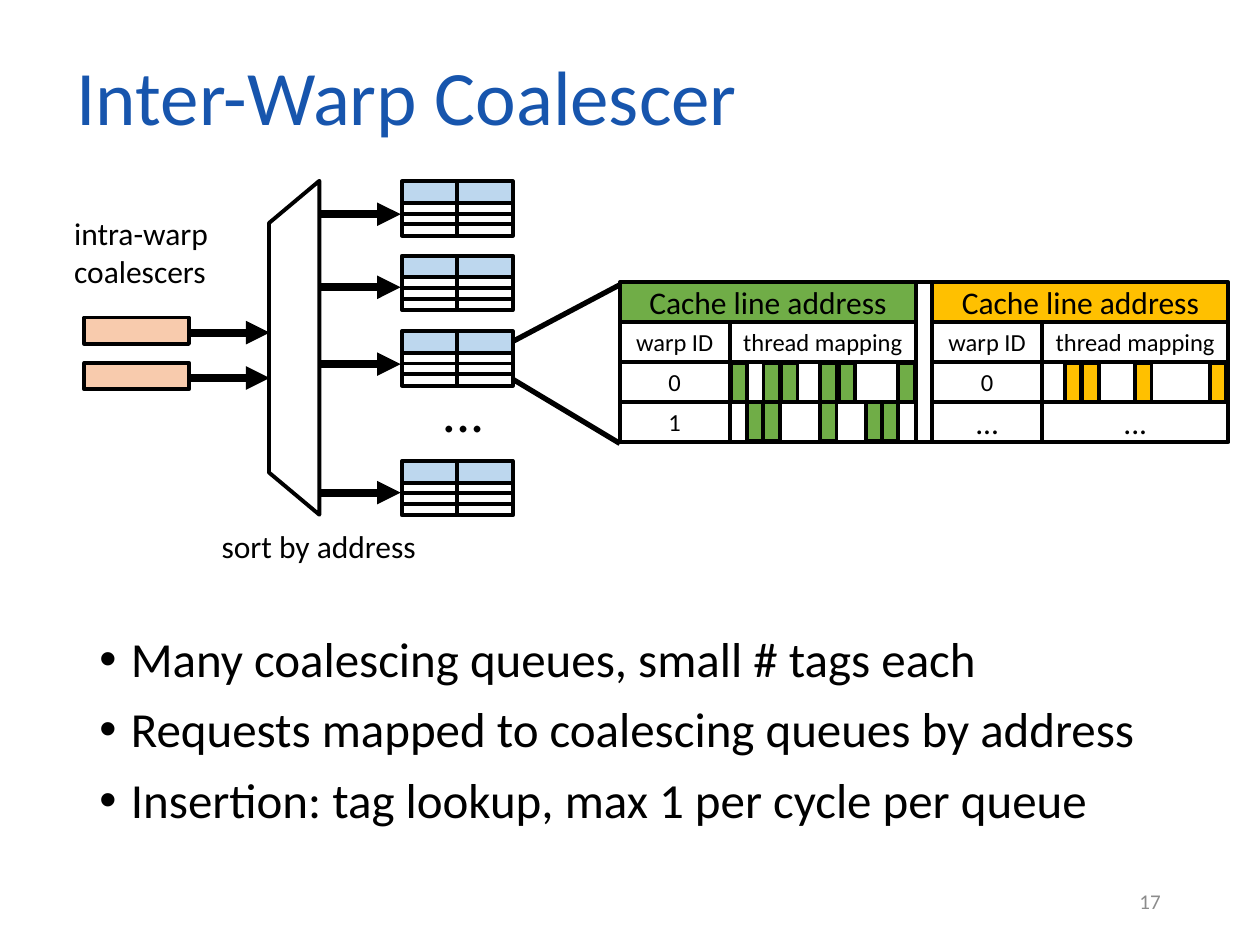
from lxml.etree import SubElement
from pptx import Presentation
from pptx.dml.color import RGBColor
from pptx.enum.shapes import MSO_CONNECTOR, MSO_SHAPE
from pptx.enum.text import MSO_ANCHOR, PP_ALIGN
from pptx.oxml.ns import qn
from pptx.util import Inches, Pt

BLACK, WHITE = "000000", "FFFFFF"
GREEN, AMBER, BLUE, PEACH = "70AD47", "FFC000", "BDD7EE", "F8CBAD"

presentation = Presentation()
presentation.slide_width, presentation.slide_height = Inches(10), Inches(7.5)
slide = presentation.slides.add_slide(presentation.slide_layouts[6])
shapes = slide.shapes


def color(hex_string):
    return RGBColor.from_string(hex_string)


def block(x, y, width, height, fill, text="", size=14, preset=MSO_SHAPE.RECTANGLE):
    """Add an outlined shape with centred text."""
    shape = shapes.add_shape(preset, Inches(x), Inches(y), Inches(width), Inches(height))
    shape.shadow.inherit = False
    shape.fill.solid()
    shape.fill.fore_color.rgb = color(fill)
    shape.line.color.rgb = color(BLACK)
    shape.line.width = Pt(2.25)
    if text:
        shape.text_frame.text = text
        shape.text_frame.vertical_anchor = MSO_ANCHOR.MIDDLE
        paragraph = shape.text_frame.paragraphs[0]
        paragraph.alignment = PP_ALIGN.CENTER
        font = paragraph.runs[0].font
        font.name, font.size, font.color.rgb = "Calibri", Pt(size), color(BLACK)
    return shape


# Title, bullets, slide number and diagram labels
bullets = """Many coalescing queues, small # tags each
Requests mapped to coalescing queues by address
Insertion: tag lookup, max 1 per cycle per queue"""
TOP, MIDDLE = MSO_ANCHOR.TOP, MSO_ANCHOR.MIDDLE
LEFT, RIGHT = PP_ALIGN.LEFT, PP_ALIGN.RIGHT
for text, x, y, width, height, size, hue, anchor, alignment in [
    ("Inter-Warp Coalescer", 0.51, 0.29, 9, 0.92, 44, "1755AD", MIDDLE, LEFT),
    (bullets, 0.69, 4.99, 8.62, 1.78, 28, BLACK, TOP, LEFT),
    ("17", 7.06, 6.95, 2.25, 0.4, 12, "8C8C8C", MIDDLE, RIGHT),
    ("...", 3.41, 2.94, 0.9, 0.64, 32, BLACK, TOP, LEFT),
    ("intra-warp\ncoalescers", 0.49, 1.65, 1.75, 0.71, 18, BLACK, TOP, LEFT),
    ("sort by address", 1.66, 4.13, 1.75, 0.4, 18, BLACK, TOP, LEFT),
]:
    frame = shapes.add_textbox(Inches(x), Inches(y), Inches(width), Inches(height)).text_frame
    frame.word_wrap = True
    frame.vertical_anchor = anchor
    frame.text = text
    for paragraph in frame.paragraphs:
        paragraph.alignment = alignment
        font = paragraph.runs[0].font
        font.name, font.size, font.color.rgb = "Calibri", Pt(size), color(hue)
        if text == bullets:
            paragraph.line_spacing = 0.9
            paragraph.space_before = Pt(10)
            properties = paragraph._p.get_or_add_pPr()
            properties.set("marL", str(Inches(0.25)))
            properties.set("indent", str(-Inches(0.25)))
            SubElement(properties, qn("a:buFont")).set("typeface", "Arial")
            SubElement(properties, qn("a:buChar")).set("char", "•")

# Sorting stage, turned so that its narrow side faces the inputs
sorter = block(1.01, 2.56, 2.65, 0.4, WHITE, preset=MSO_SHAPE.TRAPEZOID)
sorter.adjustments[0] = 0.838
sorter.rotation = 270

# Coalescing queues: a tag row above three entry rows, in two columns
for queue_y in (1.44, 2.03, 2.63, 3.66):
    for column in range(2):
        queue_x = 3.19 + 0.44 * column
        block(queue_x, queue_y, 0.44, 0.17, BLUE)
        for row in range(3):
            block(queue_x, queue_y + 0.17 + 0.085 * row, 0.44, 0.09, WHITE)

# Intra-warp coalescers
for coalescer_y in (2.52, 2.88):
    block(0.67, coalescer_y, 0.83, 0.21, PEACH)

# Arrows into and out of the sorter, then the zoom lines of the third queue
input_arrows = [(1.5, y, 2.14, y, 4.5) for y in (2.64, 3)]
output_arrows = [(2.54, y, 3.18, y, 4.5) for y in (1.7, 2.28, 2.89, 3.91)]
zoom_lines = [(4.07, 2.71, 4.92, 2.26, 3), (4.07, 3.01, 4.92, 3.52, 3)]
for x1, y1, x2, y2, weight in input_arrows + output_arrows + zoom_lines:
    connector = shapes.add_connector(
        MSO_CONNECTOR.STRAIGHT, Inches(x1), Inches(y1), Inches(x2), Inches(y2))
    connector.line.color.rgb = color(BLACK)
    connector.line.width = Pt(weight)
    if weight == 4.5:
        SubElement(connector.line._ln, qn("a:tailEnd")).set("type", "triangle")
    SubElement(connector._element.spPr, qn("a:effectLst"))

# Enlarged queue: two tags, each with a header and rows of warp ID and mapping
ROW = 0.317
block(6.78, 2.24, 1.48, 4 * ROW, WHITE)
for tag_x, fill, rows in [
    (4.92, GREEN, [("warp ID", "thread mapping", 14), ("0", "", 14), ("1", "", 14)]),
    (7.4, AMBER, [("warp ID", "thread mapping", 14), ("0", "", 14), ("...", "...", 18)]),
]:
    block(tag_x, 2.24, 2.35, ROW, fill, "Cache line address", 18)
    for number, (warp, mapping, size) in enumerate(rows, start=1):
        row_y = 2.24 + ROW * number
        block(tag_x, row_y, 0.87, ROW, WHITE, warp, size)
        block(tag_x + 0.87, row_y, 1.48, ROW, WHITE, mapping, size)

# Threads marked in each mapping
for thread_y, fill, thread_xs in [
    (2.88, GREEN, (5.8, 6.06, 6.2, 6.51, 6.66, 7.13)),
    (2.88, AMBER, (8.45, 8.59, 9.01, 9.6)),
    (3.19, GREEN, (5.93, 6.06, 6.51, 6.87, 7)),
]:
    for thread_x in thread_xs:
        block(thread_x, thread_y, 0.13, 0.31, fill)

presentation.save("out.pptx")
